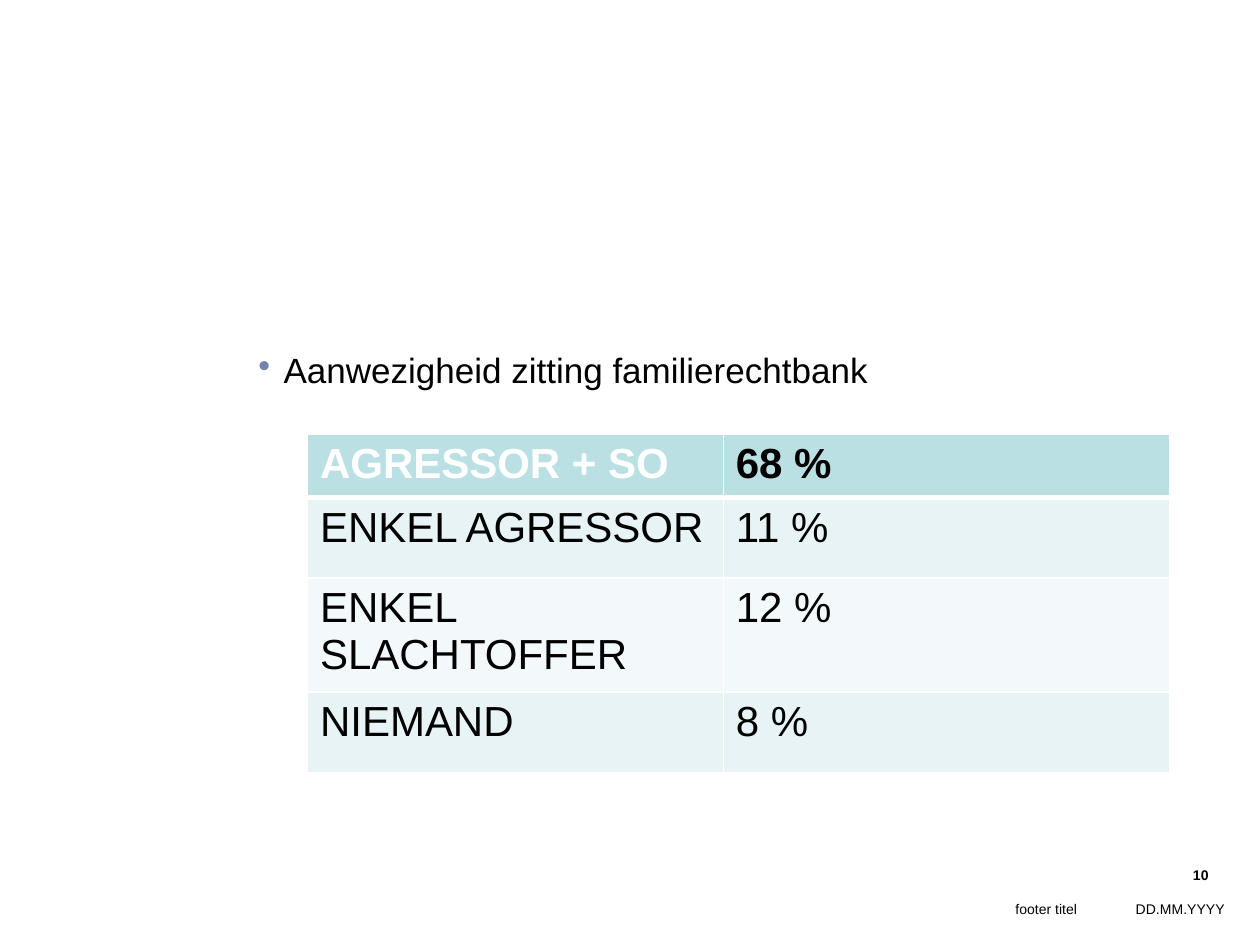
import pptx
import pptx.util
import pptx.dml.color
import pptx.enum.text
import pptx.oxml
import pptx.oxml.ns

Pt = pptx.util.Pt
ALIGN = pptx.enum.text.PP_ALIGN

THEME = {
    "font": "Arial",
    "text": "000000", "white": "FFFFFF", "bullet": "7483AE",
    "head": "BBE0E3", "bands": ("E7F3F4", "F3F9FA"),
    "body": 20, "cell": 24, "small": 8,
}

POINT = "Aanwezigheid zitting familierechtbank"
ROWS = [
    ("AGRESSOR + SO", "68 %"),
    ("ENKEL AGRESSOR", "11 %"),
    ("ENKEL SLACHTOFFER", "12 %"),
    ("NIEMAND", "8 %"),
]
WIDTHS = (237.6, 254.9)
HEIGHTS = (36, 46, 65, 46)
# text, left, top, width, height, right inset, bold
FOOTER = [
    ("DD.MM.YYYY", 614.9, 511.2, 85, 18, 0, False),
    ("footer titel", 190, 511.2, 425.5, 18, 0, False),
    ("10", 657.4, 491.8, 40.3, 18, 7.2, True),
]


def color(name):
    return pptx.dml.color.RGBColor.from_string(name)


def style(para, size, tint=THEME["text"], bold=False):
    for run in para.runs:
        run.font.name = THEME["font"]
        run.font.size = Pt(size)
        run.font.bold = bold
        run.font.color.rgb = color(tint)


def add_text(slide, text, place, insets):
    """Add a wrapped box; insets run left, top, right, bottom."""
    box = slide.shapes.add_textbox(*map(Pt, place))
    frame = box.text_frame
    frame.word_wrap = True
    (frame.margin_left, frame.margin_top,
     frame.margin_right, frame.margin_bottom) = map(Pt, insets)
    frame.text = text
    return frame.paragraphs[0]


def add_bullet(para, indent):
    props = para._p.get_or_add_pPr()
    props.set("marL", str(Pt(indent)))
    props.set("indent", str(-Pt(indent)))
    space = pptx.oxml.ns.nsdecls("a")
    for part in (
        f'<a:buClr {space}><a:srgbClr val="{THEME["bullet"]}"/></a:buClr>',
        f'<a:buChar {space} char="•"/>',
    ):
        props.append(pptx.oxml.parse_xml(part))


def add_borders(cell, widths):
    """Draw white cell edges; widths run left, right, top, bottom."""
    props = cell._tc.get_or_add_tcPr()
    space = pptx.oxml.ns.nsdecls("a")
    for side, width in zip("LRTB", widths):
        props.append(pptx.oxml.parse_xml(
            f'<a:ln{side} {space} w="{Pt(width)}"><a:solidFill>'
            f'<a:srgbClr val="{THEME["white"]}"/></a:solidFill></a:ln{side}>'))


def add_grid(slide, left, top):
    grid = slide.shapes.add_table(
        len(ROWS), len(WIDTHS), Pt(left), Pt(top),
        Pt(sum(WIDTHS)), Pt(sum(HEIGHTS))).table
    for column, width in zip(grid.columns, WIDTHS):
        column.width = Pt(width)
    for r, (row, height) in enumerate(zip(ROWS, HEIGHTS)):
        grid.rows[r].height = Pt(height)
        head = r == 0
        fill = THEME["head"] if head else THEME["bands"][(r - 1) % 2]
        for c, text in enumerate(row):
            cell = grid.cell(r, c)
            cell.text_frame.text = text
            tint = THEME["white"] if head and c == 0 else THEME["text"]
            style(cell.text_frame.paragraphs[0], THEME["cell"], tint, head)
            add_borders(cell, (1, 1, 3 if r == 1 else 1, 3 if head else 1))
            cell.fill.solid()
            cell.fill.fore_color.rgb = color(fill)


def main():
    deck = pptx.Presentation()
    deck.slide_width, deck.slide_height = Pt(720), Pt(540)
    slide = deck.slides.add_slide(deck.slide_layouts[6])

    for text, left, top, width, height, inset, bold in FOOTER:
        para = add_text(slide, text, (left, top, width, height),
                        (7.2, 3.6, inset, 3.6))
        para.alignment = ALIGN.RIGHT
        style(para, THEME["small"], bold=bold)

    add_grid(slide, 175.7, 248.4)

    para = add_text(slide, POINT, (147.6, 199.4, 536.4, 292.3),
                    (0, 0, 7.2, 3.6))
    add_bullet(para, 14.4)
    style(para, THEME["body"])

    deck.save("out.pptx")


if __name__ == "__main__":
    main()
